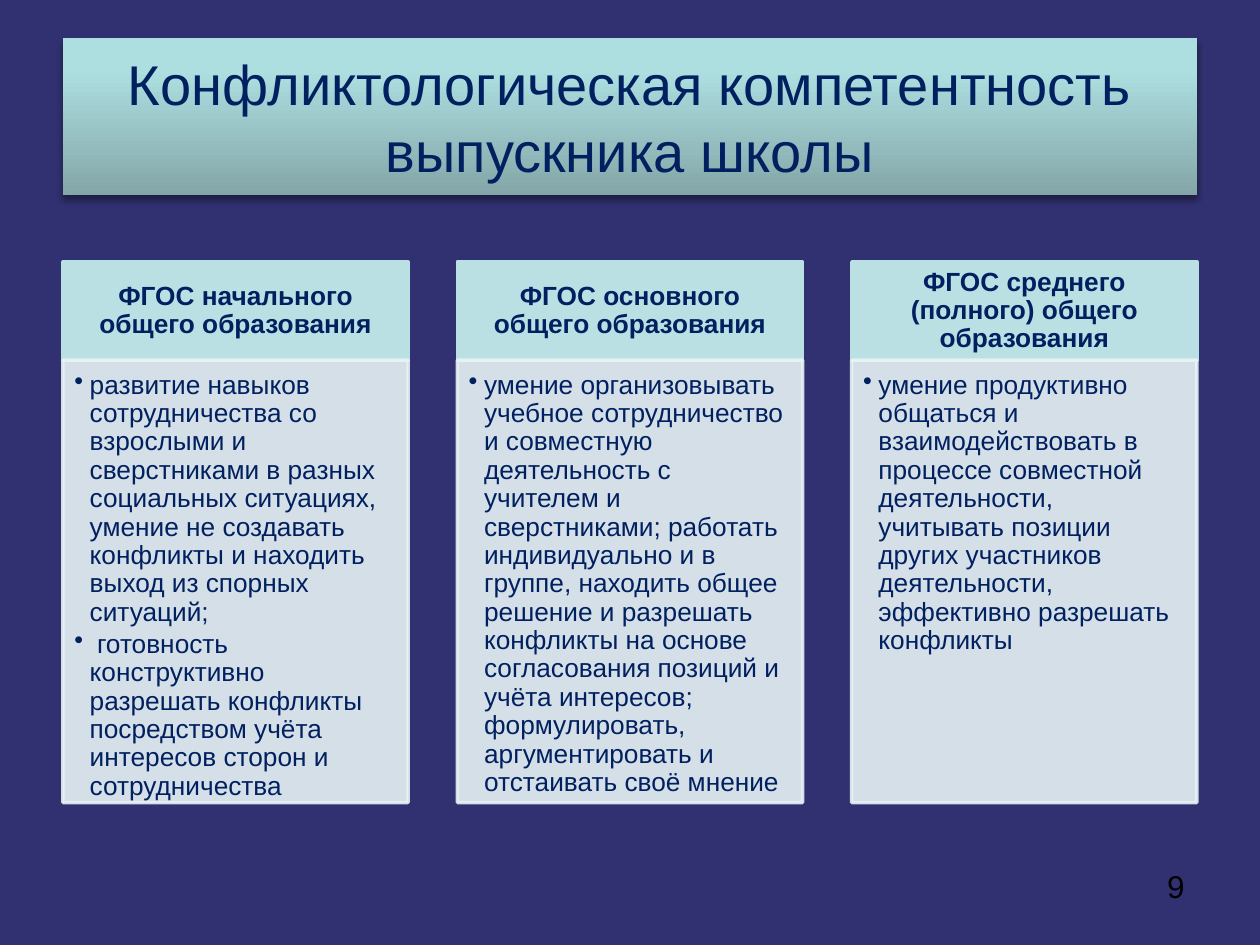
"""Build a slide comparing conflict competence across three school standards."""
from lxml import etree
from pptx import Presentation
from pptx.dml.color import RGBColor
from pptx.enum.shapes import MSO_SHAPE
from pptx.enum.text import MSO_ANCHOR, PP_ALIGN
from pptx.oxml.ns import qn
from pptx.util import Cm, Pt

TITLE = "Конфликтологическая компетентность выпускника школы"
PAGE_NUMBER = "9"
STANDARDS = [
    ("ФГОС начального общего образования", [
        "развитие навыков сотрудничества со взрослыми и сверстниками в разных "
        "социальных ситуациях, умение не создавать конфликты и находить выход "
        "из спорных ситуаций;",
        " готовность конструктивно разрешать конфликты посредством учёта "
        "интересов сторон и сотрудничества",
    ]),
    ("ФГОС основного общего образования", [
        "умение организовывать учебное сотрудничество и совместную деятельность "
        "с учителем и сверстниками; работать индивидуально и в группе, находить "
        "общее решение и разрешать конфликты на основе согласования позиций и "
        "учёта интересов; формулировать, аргументировать и отстаивать своё мнение",
    ]),
    ("ФГОС среднего (полного) общего образования", [
        "умение продуктивно общаться и взаимодействовать в процессе совместной "
        "деятельности, учитывать позиции других участников деятельности, "
        "эффективно разрешать конфликты",
    ]),
]

FONT = "Arial"
BACKGROUND = RGBColor(0x31, 0x31, 0x71)
NAVY = RGBColor(0x00, 0x20, 0x60)
BLACK = RGBColor(0x00, 0x00, 0x00)
TEAL = RGBColor(0xBB, 0xE0, 0xE3)
PALE = RGBColor(0xE7, 0xF3, 0xF4)
TITLE_TOP = RGBColor(0xAD, 0xDF, 0xE1)
TITLE_BOTTOM = RGBColor(0x84, 0xA6, 0xA8)
RECTANGLE = MSO_SHAPE.RECTANGLE
TOP, MIDDLE = MSO_ANCHOR.TOP, MSO_ANCHOR.MIDDLE
LEFT, CENTER, RIGHT = PP_ALIGN.LEFT, PP_ALIGN.CENTER, PP_ALIGN.RIGHT

MARGIN, CONTENT_WIDTH = 1.27, 22.86
COLUMN_WIDTH = 6.96
COLUMN_STEP = (CONTENT_WIDTH - COLUMN_WIDTH) / (len(STANDARDS) - 1)
HEADER_TOP, HEADER_HEIGHT, BODY_HEIGHT = 5.28, 1.98, 8.92
HEADER_INSETS = (0.3, 0.18, 0.3, 0.18)
BODY_INSETS = (0.23, 0.23, 0.3, 0.33)
DEFAULT_INSETS = (0.25, 0.13, 0.25, 0.13)
BULLET_INDENT = 0.31


def add_rectangle(slide, left, top, width, height):
    shape = slide.shapes.add_shape(RECTANGLE, Cm(left), Cm(top), Cm(width), Cm(height))
    shape.shadow.inherit = False
    return shape


def paint(shape, color, opacity=100):
    shape.fill.solid()
    shape.fill.fore_color.rgb = color
    shape.line.color.rgb = color
    shape.line.width = Pt(2)
    if opacity < 100:
        for element in shape.element.spPr.iter(qn("a:srgbClr")):
            etree.SubElement(element, qn("a:alpha"), val=str(opacity * 1000))


def set_frame(shape, anchor, insets):
    frame = shape.text_frame
    frame.word_wrap = True
    frame.vertical_anchor = anchor
    (frame.margin_left, frame.margin_top,
     frame.margin_right, frame.margin_bottom) = map(Cm, insets)
    return frame


def write(paragraph, text, size, color=NAVY, align=LEFT, bold=False, spacing=1.0):
    paragraph.alignment = align
    paragraph.line_spacing = spacing
    run = paragraph.add_run()
    run.text = text
    run.font.name = FONT
    run.font.size = Pt(size)
    run.font.bold = bold
    run.font.color.rgb = color


def add_bullet(paragraph):
    properties = paragraph._p.get_or_add_pPr()
    properties.set("marL", str(Cm(BULLET_INDENT)))
    properties.set("indent", str(-Cm(BULLET_INDENT)))
    etree.SubElement(properties, qn("a:buChar"), char="•")


def add_title(slide):
    shape = add_rectangle(slide, MARGIN, 0.76, CONTENT_WIDTH, 3.18)
    shape.line.fill.background()
    shape.fill.gradient()
    shape.fill.gradient_angle = 270
    stops = zip(shape.fill.gradient_stops, (TITLE_TOP, TITLE_BOTTOM), (0.2, 1))
    for stop, color, position in stops:
        stop.color.rgb = color
        stop.position = position
    effects = shape.element.spPr.find(qn("a:effectLst"))
    shadow = etree.SubElement(effects, qn("a:outerShdw"), blurRad=str(Pt(4)),
                              dist=str(Pt(2)), dir="5400000", rotWithShape="0")
    shade = etree.SubElement(shadow, qn("a:srgbClr"), val="000000")
    etree.SubElement(shade, qn("a:alpha"), val="40000")
    frame = set_frame(shape, MIDDLE, DEFAULT_INSETS)
    write(frame.paragraphs[0], TITLE, 32, align=CENTER)


def add_standard(slide, left, heading, skills):
    header = add_rectangle(slide, left, HEADER_TOP, COLUMN_WIDTH, HEADER_HEIGHT)
    paint(header, TEAL)
    frame = set_frame(header, MIDDLE, HEADER_INSETS)
    write(frame.paragraphs[0], heading, 15, align=CENTER, bold=True, spacing=0.9)

    body = add_rectangle(slide, left, HEADER_TOP + HEADER_HEIGHT, COLUMN_WIDTH, BODY_HEIGHT)
    paint(body, PALE, 90)
    frame = set_frame(body, TOP, BODY_INSETS)
    for index, skill in enumerate(skills):
        paragraph = frame.add_paragraph() if index else frame.paragraphs[0]
        write(paragraph, skill, 15, spacing=0.9)
        paragraph.space_after = Pt(2.25)
        add_bullet(paragraph)


def main():
    presentation = Presentation()
    presentation.slide_width, presentation.slide_height = Cm(25.4), Cm(19.05)
    slide = presentation.slides.add_slide(presentation.slide_layouts[6])
    slide.background.fill.solid()
    slide.background.fill.fore_color.rgb = BACKGROUND

    add_title(slide)
    for index, (heading, skills) in enumerate(STANDARDS):
        add_standard(slide, MARGIN + index * COLUMN_STEP, heading, skills)

    number = slide.shapes.add_textbox(Cm(18.21), Cm(17.35), Cm(5.92), Cm(1.32))
    frame = set_frame(number, TOP, DEFAULT_INSETS)
    write(frame.paragraphs[0], PAGE_NUMBER, 18, BLACK, RIGHT)
    presentation.save("out.pptx")


if __name__ == "__main__":
    main()
